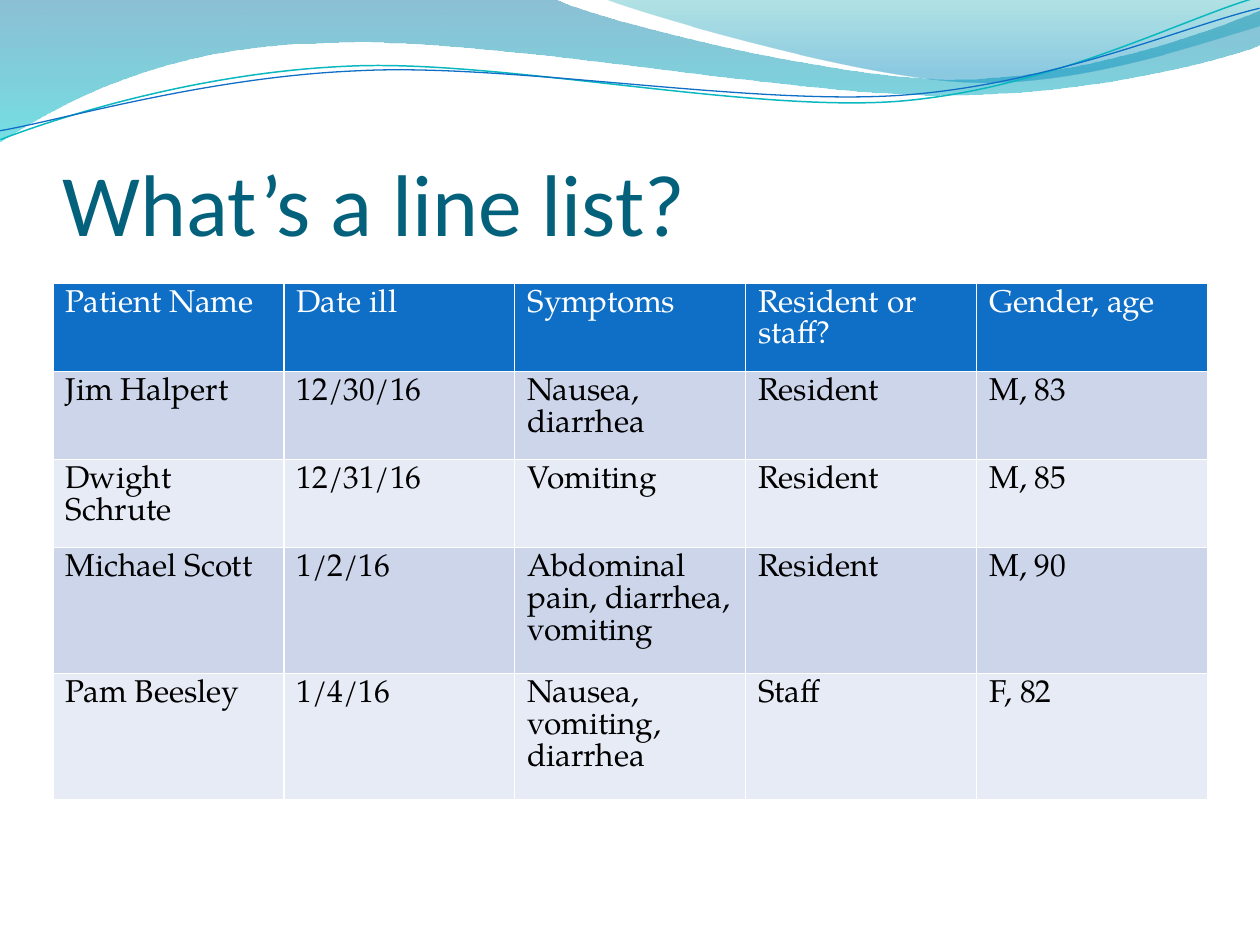
from dataclasses import dataclass

import lxml.etree
import pptx
import pptx.dml.color
import pptx.enum.text
import pptx.oxml.ns
import pptx.util

EMU_PER_PX = 914400 / 126


def px(length):
    return pptx.util.Emu(round(length * EMU_PER_PX))


def rgb(code):
    return pptx.dml.color.RGBColor.from_string(code)


def add_node(parent, tag, **attributes):
    return lxml.etree.SubElement(parent, pptx.oxml.ns.qn(tag), attributes)


@dataclass(frozen=True)
class Theme:
    title_font: str = "Calibri"
    body_font: str = "TeX Gyre Pagella"
    title_size: int = 50
    body_size: int = 18
    border_width: float = 0.75
    title: str = "04617B"
    header: str = "0F6FC6"
    bands: tuple = ("CCD5EA", "E7EBF5")
    white: str = "FFFFFF"
    black: str = "000000"
    teal_line: str = "0AB8BF"
    blue_line: str = "0F6FC6"
    left_wave: tuple = ((0, "0074A1", 45), (100, "00C6CF", 55))
    right_wave: tuple = ((0, "00A1A9", 30), (80, "008BBF", 45))


class SlideBuilder:
    """Draws styled elements on the current slide."""

    def __init__(self, slide, theme):
        self.slide = slide
        self.theme = theme

    def outline(self, start, segments, close):
        builder = self.slide.shapes.build_freeform(px(start[0]), px(start[1]), scale=1.0)
        builder.add_line_segments(
            [(px(x), px(y)) for segment in segments for x, y in segment], close=close)
        shape = builder.convert_to_shape()
        shape.shadow.inherit = False
        steps = iter(list(shape._element.iter(pptx.oxml.ns.qn("a:lnTo"))))
        for segment in segments:
            first, *others = [next(steps) for _ in segment]
            if others:
                curve = lxml.etree.Element(pptx.oxml.ns.qn("a:cubicBezTo"))
                first.addprevious(curve)
                for step in (first, *others):
                    curve.append(step[0])
                    step.getparent().remove(step)
        return shape

    def wave(self, start, segments, stops):
        wave = self.outline(start, segments, True)
        wave.line.fill.background()
        wave.fill.gradient()
        wave.fill.gradient_angle = 270
        for stop, (position, color, opacity) in zip(wave.fill.gradient_stops, stops):
            stop.position = position / 100
            stop.color.rgb = rgb(color)
        gradient = wave._element.spPr.find(pptx.oxml.ns.qn("a:gradFill"))
        for node, stop in zip(gradient.iter(pptx.oxml.ns.qn("a:srgbClr")), stops):
            add_node(node, "a:alpha", val=str(stop[2] * 1000))

    def strand(self, start, segments, color, width):
        strand = self.outline(start, segments, False)
        strand.rotation = 357.3
        strand.fill.background()
        strand.line.color.rgb = rgb(color)
        strand.line.width = pptx.util.Pt(width)

    def run(self, paragraph, text, font, size, color):
        run = paragraph.add_run()
        run.text = text
        run.font.name = font
        run.font.size = pptx.util.Pt(size)
        run.font.bold = False
        run.font.color.rgb = rgb(color)

    def title(self, text, left, top, width, height):
        frame = self.slide.shapes.add_textbox(
            px(left), px(top), px(width), px(height)).text_frame
        frame.word_wrap = True
        frame.vertical_anchor = pptx.enum.text.MSO_ANCHOR.BOTTOM
        frame.margin_left = frame.margin_right = frame.margin_bottom = 0
        frame.margin_top = px(6)
        self.run(frame.paragraphs[0], text, self.theme.title_font,
                 self.theme.title_size, self.theme.title)

    def borders(self, cell):
        properties = cell._tc.get_or_add_tcPr()
        width = str(pptx.util.Pt(self.theme.border_width))
        for side in "LRTB":
            border = add_node(properties, f"a:ln{side}", w=width)
            fill = add_node(border, "a:solidFill")
            add_node(fill, "a:srgbClr", val=self.theme.white)

    def table(self, records, left, top, column_width, row_heights):
        columns = len(records[0])
        table = self.slide.shapes.add_table(
            len(records), columns, px(left), px(top),
            px(column_width * columns), px(sum(row_heights))).table
        for column in table.columns:
            column.width = px(column_width)
        for index, (record, height) in enumerate(zip(records, row_heights)):
            table.rows[index].height = px(height)
            if index == 0:
                fill, ink = self.theme.header, self.theme.white
            else:
                fill, ink = self.theme.bands[(index - 1) % 2], self.theme.black
            for cell, text in zip(table.rows[index].cells, record):
                self.borders(cell)
                cell.fill.solid()
                cell.fill.fore_color.rgb = rgb(fill)
                self.run(cell.text_frame.paragraphs[0], text,
                         self.theme.body_font, self.theme.body_size, ink)


def main():
    theme = Theme()
    deck = pptx.Presentation()
    deck.slide_width, deck.slide_height = px(1260), px(945)
    builder = SlideBuilder(deck.slides.add_slide(deck.slide_layouts[6]), theme)

    builder.wave((0, 0), [
        ((554, -1),),
        ((600, 21), (837, 79), (955, 79)),
        ((1075, 79), (1207, 33), (1260, 11)),
        ((1261, 45),),
        ((1239, 55), (1096, 96), (940, 95)),
        ((784, 95), (481, 35), (324, 43)),
        ((163, 45), (58, 105), (-1, 142)),
    ], theme.left_wave)
    builder.wave((604, -1), [
        ((641, 14), (859, 78), (969, 82)),
        ((1079, 87), (1211, 40), (1260, 26)),
        ((1260, 0),),
    ], theme.right_wave)
    builder.strand((-2, 110), [
        ((58, 90), (200, 52), (350, 53)),
        ((499, 53), (745, 118), (896, 114)),
        ((1048, 109), (1184, 45), (1260, 27)),
    ], theme.teal_line, 0.85)
    builder.strand((-2, 101), [
        ((57, 94), (207, 57), (358, 58)),
        ((509, 57), (750, 112), (902, 108)),
        ((1052, 104), (1187, 52), (1262, 38)),
    ], theme.blue_line, 0.75)

    builder.title("What’s a line list?", 63, 97, 1134, 157)
    builder.table([
        ("Patient Name", "Date ill", "Symptoms", "Resident or staff?", "Gender, age"),
        ("Jim Halpert", "12/30/16", "Nausea, diarrhea", "Resident", "M, 83"),
        ("Dwight Schrute", "12/31/16", "Vomiting", "Resident", "M, 85"),
        ("Michael Scott", "1/2/16", "Abdominal pain, diarrhea, vomiting", "Resident", "M, 90"),
        ("Pam Beesley", "1/4/16", "Nausea, vomiting, diarrhea", "Staff", "F, 82"),
    ], 53, 283, 231, (88, 76, 88, 108, 107))

    deck.save("out.pptx")


if __name__ == "__main__":
    main()
